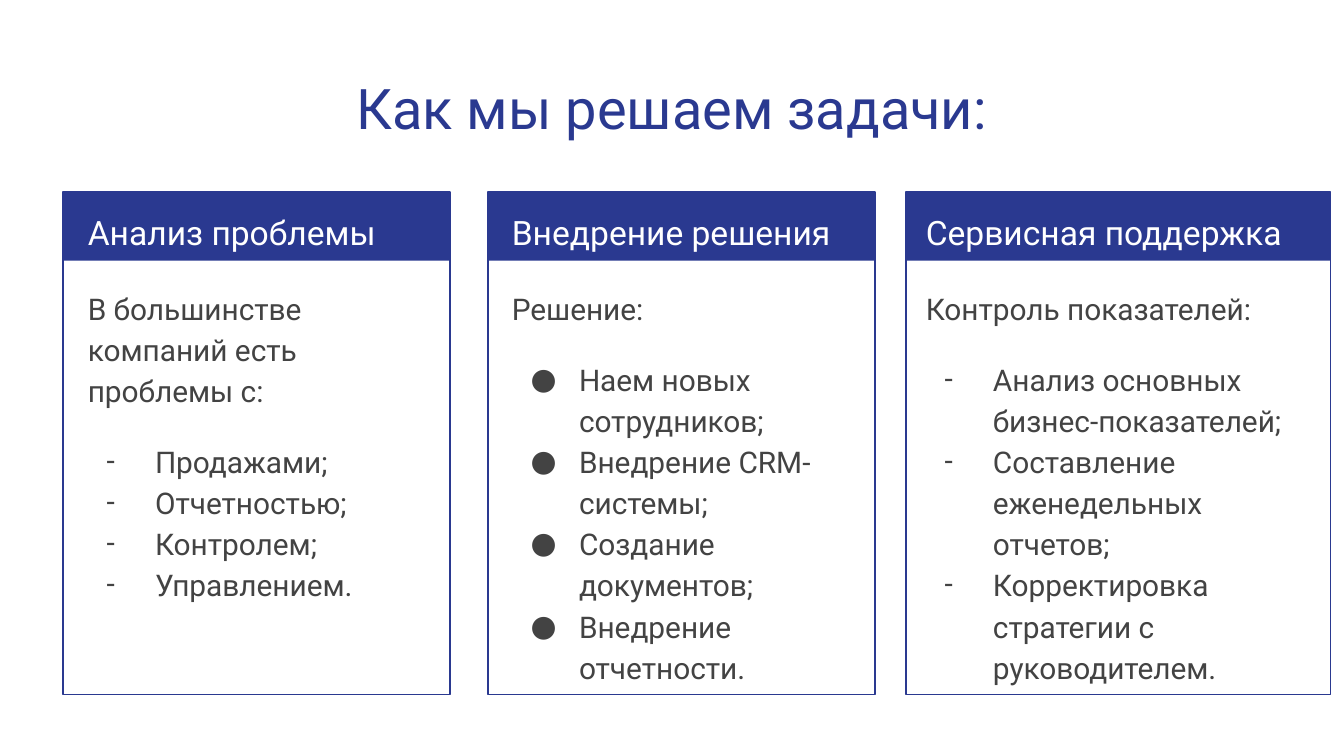
from dataclasses import dataclass
from typing import Any

from lxml.etree import SubElement
from pptx import Presentation
from pptx.dml.color import RGBColor
from pptx.enum.shapes import MSO_SHAPE
from pptx.enum.text import MSO_ANCHOR, PP_ALIGN
from pptx.oxml.ns import qn
from pptx.util import Emu, Inches, Pt


@dataclass(frozen=True)
class Theme:
    accent: str = "2A3990"
    paper: str = "FFFFFF"
    ink: str = "434343"
    font: str = "Roboto"
    title_size: int = 30
    heading_size: int = 18
    body_size: int = 16
    border: float = 0.75
    line_spacing: float = 1.15
    bullet_margin: float = 0.5
    bullet_hang: float = 0.36


@dataclass(frozen=True)
class Area:
    left: float
    top: float
    width: float
    height: float

    def lengths(self) -> tuple[Emu, ...]:
        return (
            Emu(round(SLIDE_WIDTH * self.left / 100)),
            Emu(round(SLIDE_HEIGHT * self.top / 100)),
            Emu(round(SLIDE_WIDTH * self.width / 100)),
            Emu(round(SLIDE_HEIGHT * self.height / 100)),
        )


@dataclass(frozen=True)
class Card:
    left: float
    width: float
    text_inset: float
    text_width: float
    heading: str
    intro: str
    bullet: str
    items: tuple[str, ...]


THEME = Theme()
SLIDE_WIDTH = Inches(10)
SLIDE_HEIGHT = Emu(SLIDE_WIDTH * 9 // 16)
CARD_TOP, CARD_HEIGHT, HEADER_HEIGHT = 25.42, 66.49, 9.07
BODY_TOP, BODY_HEIGHT = 35.91, 54.4
TITLE_AREA = Area(3.4, 8, 93.2, 11.73)

CARDS = (
    Card(4.7, 28.8, 0.85, 27.2, "Анализ проблемы",
         "В большинстве компаний есть проблемы с:", "-",
         ("Продажами;", "Отчетностью;", "Контролем;", "Управлением.")),
    Card(36.3, 28.8, 0.8, 27.2, "Внедрение решения", "Решение:", "●",
         ("Наем новых сотрудников;", "Внедрение CRM-системы;",
          "Создание документов;", "Внедрение отчетности.")),
    Card(67.4, 31.6, 0.5, 29.6, "Сервисная поддержка",
         "Контроль показателей:", "-",
         ("Анализ основных бизнес-показателей;",
          "Составление еженедельных отчетов;",
          "Корректировка стратегии с руководителем.")),
)


def apply_format(target: Any, values: dict[str, Any]) -> None:
    for name, value in values.items():
        setattr(target, name, value)


def add_bullet(paragraph: Any, character: str) -> None:
    properties = paragraph._p.get_or_add_pPr()
    properties.set("marL", str(Inches(THEME.bullet_margin)))
    properties.set("indent", str(-Inches(THEME.bullet_hang)))
    color = SubElement(properties, qn("a:buClr"))
    SubElement(color, qn("a:srgbClr"), val=THEME.ink)
    SubElement(properties, qn("a:buFont"), typeface=THEME.font)
    SubElement(properties, qn("a:buChar"), char=character)


def write_paragraph(paragraph: Any, text: str, size: int, color: str,
                    **values: Any) -> None:
    apply_format(paragraph, values)
    run = paragraph.add_run()
    run.text = text
    apply_format(run.font, {"name": THEME.font, "size": Pt(size)})
    run.font.color.rgb = RGBColor.from_string(color)


def add_text_frame(slide: Any, area: Area) -> Any:
    frame = slide.shapes.add_textbox(*area.lengths()).text_frame
    margins = {f"margin_{side}": Inches(0.1)
               for side in ("left", "top", "right", "bottom")}
    apply_format(frame, {"word_wrap": True,
                         "vertical_anchor": MSO_ANCHOR.TOP, **margins})
    return frame


def add_rectangle(group: Any, area: Area, filled: bool) -> None:
    shape = group.shapes.add_shape(MSO_SHAPE.RECTANGLE, *area.lengths())
    shape.shadow.inherit = False
    accent = RGBColor.from_string(THEME.accent)
    if filled:
        shape.fill.solid()
        shape.fill.fore_color.rgb = accent
        shape.line.fill.background()
    else:
        shape.fill.background()
        shape.line.color.rgb = accent
        shape.line.width = Pt(THEME.border)


def add_card(slide: Any, card: Card) -> None:
    group = slide.shapes.add_group_shape()
    for height, filled in ((HEADER_HEIGHT, True), (CARD_HEIGHT, False)):
        add_rectangle(group, Area(card.left, CARD_TOP, card.width, height), filled)

    text_left = card.left + card.text_inset
    spacing = {"line_spacing": THEME.line_spacing}
    heading = add_text_frame(
        slide, Area(text_left, CARD_TOP, card.text_width, HEADER_HEIGHT))
    write_paragraph(heading.paragraphs[0], card.heading, THEME.heading_size,
                    THEME.paper, **spacing)

    body = add_text_frame(
        slide, Area(text_left, BODY_TOP, card.text_width, BODY_HEIGHT))
    write_paragraph(body.paragraphs[0], card.intro, THEME.body_size,
                    THEME.ink, **spacing)
    for index, item in enumerate(card.items):
        paragraph = body.add_paragraph()
        add_bullet(paragraph, card.bullet)
        space_before = Pt(0 if index else THEME.body_size)
        write_paragraph(paragraph, item, THEME.body_size, THEME.ink,
                        space_before=space_before, **spacing)


def main() -> None:
    presentation = Presentation()
    apply_format(presentation, {"slide_width": SLIDE_WIDTH,
                                "slide_height": SLIDE_HEIGHT})
    slide = presentation.slides.add_slide(presentation.slide_layouts[6])
    title = add_text_frame(slide, TITLE_AREA)
    write_paragraph(title.paragraphs[0], "Как мы решаем задачи:",
                    THEME.title_size, THEME.accent, alignment=PP_ALIGN.CENTER)
    for card in CARDS:
        add_card(slide, card)
    presentation.save("out.pptx")


if __name__ == "__main__":
    main()
